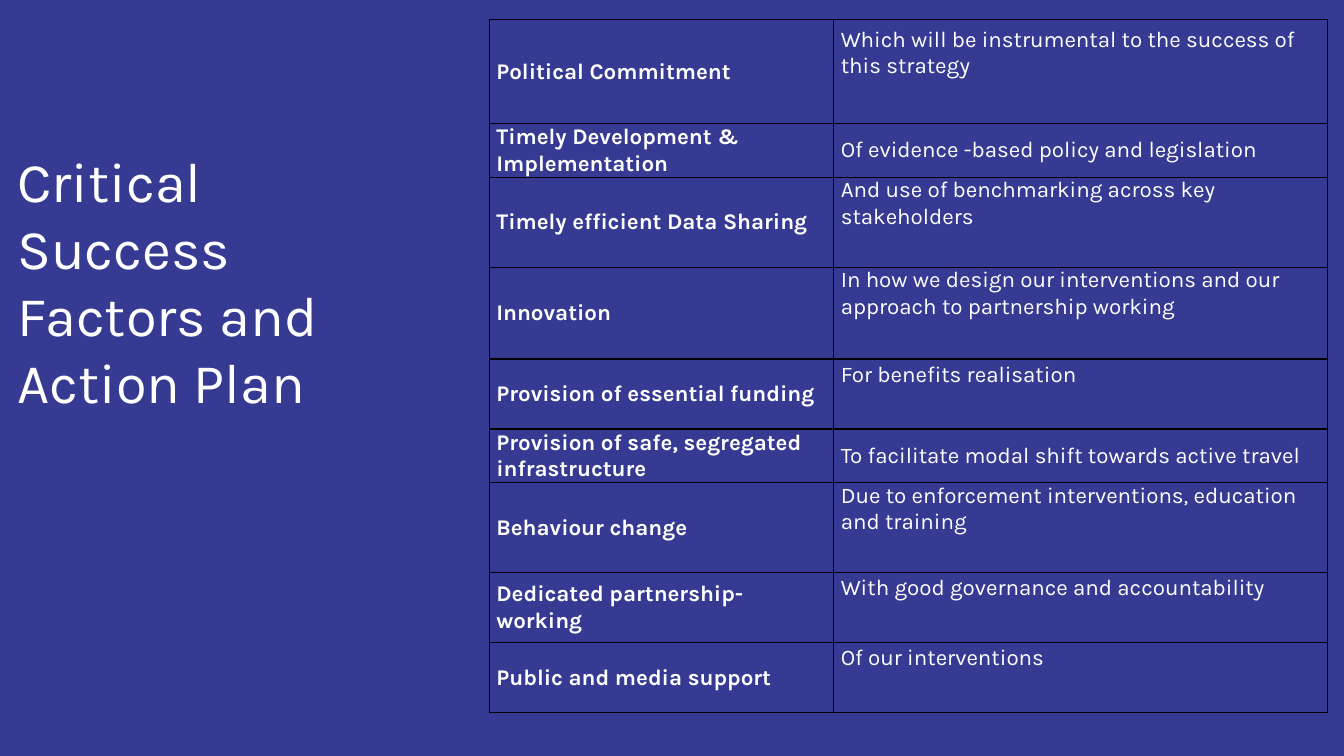
from dataclasses import dataclass

from lxml import etree
from pptx import Presentation
from pptx.dml.color import RGBColor
from pptx.enum.text import MSO_ANCHOR
from pptx.oxml.ns import qn
from pptx.util import Pt

TOP = MSO_ANCHOR.TOP
MIDDLE = MSO_ANCHOR.MIDDLE


@dataclass(frozen=True)
class Theme:
    back: str = "363A92"
    ink: str = "FFFFFF"
    rule: str = "000000"
    font: str = "Karla"
    head: int = 40
    body: int = 16


THEME = Theme()
TITLE = "Critical Success Factors and Action Plan"
COLS = (246, 353)
FACTORS = (
    (74.3, "Political Commitment",
     "Which will be instrumental to the success of this strategy", TOP, 5),
    (37.1, "Timely Development & Implementation",
     "Of evidence -based policy and legislation", MIDDLE, 0),
    (64.3, "Timely efficient Data Sharing",
     "And use of benchmarking across key stakeholders", TOP, 0),
    (65.4, "Innovation",
     "In how we design our interventions and our approach to partnership working",
     TOP, 0),
    (50, "Provision of essential funding", "For benefits realisation", TOP, 2),
    (37.3, "Provision of safe, segregated infrastructure",
     "To facilitate modal shift towards active travel", MIDDLE, 0),
    (64.3, "Behaviour change",
     "Due to enforcement interventions, education and training", TOP, 0),
    (50, "Dedicated partnership-working",
     "With good governance and accountability", TOP, 2),
    (50, "Public and media support", "Of our interventions", TOP, 2),
)


def paint(fill, color):
    fill.solid()
    fill.fore_color.rgb = RGBColor.from_string(color)


def write(frame, text, size, after, bold=False):
    para = frame.paragraphs[0]
    para.text = text
    para.space_after = Pt(after)
    font = para.font
    font.name = THEME.font
    font.size = Pt(size)
    font.bold = bold
    font.color.rgb = RGBColor.from_string(THEME.ink)


def add_title(slide):
    box = slide.shapes.add_textbox(Pt(12.4), Pt(104.4), Pt(289.4), Pt(331))
    frame = box.text_frame
    frame.word_wrap = True
    frame.margin_left = frame.margin_right = 0
    frame.margin_top = frame.margin_bottom = 0
    write(frame, TITLE, THEME.head, 10.9)


def add_rules(cell):
    props = cell._tc.get_or_add_tcPr()
    for side in ("lnL", "lnR", "lnT", "lnB"):
        line = etree.SubElement(props, qn(f"a:{side}"), w=str(Pt(1)))
        fill = etree.SubElement(line, qn("a:solidFill"))
        etree.SubElement(fill, qn("a:srgbClr"), val=THEME.rule)


def fill_cell(cell, text, anchor, gap, bold):
    add_rules(cell)
    paint(cell.fill, THEME.back)
    cell.vertical_anchor = anchor
    cell.margin_left = cell.margin_right = Pt(5.2)
    cell.margin_top = Pt(gap)
    cell.margin_bottom = 0
    write(cell.text_frame, text, THEME.body, 8, bold)


def add_factors(slide):
    high = sum(factor[0] for factor in FACTORS)
    frame = slide.shapes.add_table(
        len(FACTORS), len(COLS), Pt(349.4), Pt(14), Pt(sum(COLS)), Pt(high))
    table = frame.table
    table.first_row = table.horz_banding = False
    for col, width in zip(table.columns, COLS):
        col.width = Pt(width)
    for row, (tall, label, detail, anchor, gap) in zip(table.rows, FACTORS):
        row.height = Pt(tall)
        fill_cell(row.cells[0], label, MIDDLE, 0, True)
        fill_cell(row.cells[1], detail, anchor, gap, False)


def main():
    deck = Presentation()
    deck.slide_width = Pt(960)
    deck.slide_height = Pt(540)
    slide = deck.slides.add_slide(deck.slide_layouts[6])
    paint(slide.background.fill, THEME.back)
    add_title(slide)
    add_factors(slide)
    deck.save("out.pptx")


if __name__ == "__main__":
    main()
